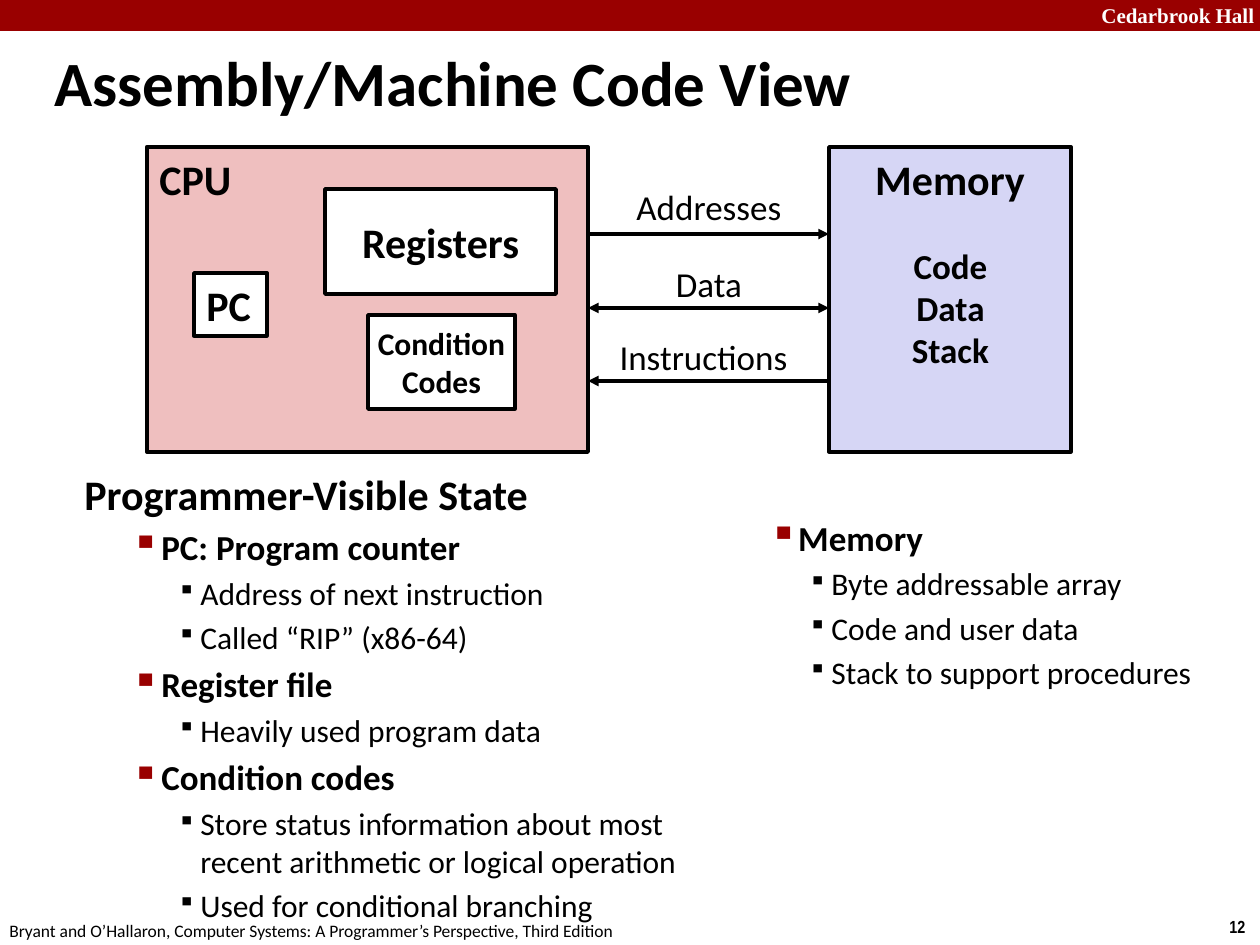
from lxml import etree
from pptx import Presentation
from pptx.dml.color import RGBColor
from pptx.enum.shapes import MSO_CONNECTOR, MSO_SHAPE
from pptx.enum.text import MSO_ANCHOR, PP_ALIGN
from pptx.oxml.ns import qn
from pptx.util import Pt

RECT, STRAIGHT = MSO_SHAPE.RECTANGLE, MSO_CONNECTOR.STRAIGHT
LEFT, CENTER = PP_ALIGN.LEFT, PP_ALIGN.CENTER
TOP, MIDDLE = MSO_ANCHOR.TOP, MSO_ANCHOR.MIDDLE

BLACK = RGBColor(0x00, 0x00, 0x00)
WHITE = RGBColor(0xFF, 0xFF, 0xFF)
CRIMSON = RGBColor(0x99, 0x00, 0x00)
PINK = RGBColor(0xEF, 0xBF, 0xBF)
LAVENDER = RGBColor(0xD6, 0xD6, 0xF5)

PX = 914400 / 126


def px(*lengths):
    return [round(length * PX) for length in lengths]


def write(shape, lines, size, bold=False, align=LEFT, anchor=TOP, wrap=True,
          font="Calibri", color=BLACK):
    frame = shape.text_frame
    frame.word_wrap = wrap
    frame.vertical_anchor = anchor
    frame.text = lines
    for paragraph in frame.paragraphs:
        paragraph.alignment = align
        style = {"name": font, "size": Pt(size), "bold": bold}
        for key, value in style.items():
            setattr(paragraph.font, key, value)
        paragraph.font.color.rgb = color


prs = Presentation()
prs.slide_width, prs.slide_height = px(1260, 945)
slide = prs.slides.add_slide(prs.slide_layouts[6])
shapes = slide.shapes

# Header band, page number and footer
band = shapes.add_shape(RECT, *px(0, 0, 1260, 31))
band.shadow.inherit = False
band.fill.solid()
band.fill.fore_color.rgb = CRIMSON
band.line.fill.background()

school = shapes.add_textbox(*px(1089, -4, 180, 38))
write(school, "Cedarbrook Hall", 12, bold=True, font="Times New Roman", color=WHITE)
page = shapes.add_textbox(*px(1217, 910, 43, 34))
write(page, "12", 10, bold=True, wrap=False, font="Arial Narrow")
footer = shapes.add_textbox(*px(-3, 914, 640, 34))
write(footer, "Bryant and O’Hallaron, Computer Systems: "
      "A Programmer’s Perspective, Third Edition", 10, wrap=False)

# Title
title = shapes.add_textbox(*px(42, 42, 995, 79))
write(title, "Assembly/Machine Code View", 36, bold=True, anchor=MIDDLE)

# CPU with its parts, and memory
BLOCKS = [
    ("CPU", (147, 147, 441, 305), PINK, 2.25, 24, LEFT, TOP),
    ("PC", (194, 273, 73, 63), WHITE, 2, 24, LEFT, MIDDLE),
    ("Registers", (325, 189, 231, 105), WHITE, 2, 24, CENTER, MIDDLE),
    ("Condition\nCodes", (368, 315, 147, 94), WHITE, 2, 18, CENTER, MIDDLE),
    ("Memory", (829, 147, 242, 305), LAVENDER, 2, 24, CENTER, TOP),
]
for name, place, fill, border, size, align, anchor in BLOCKS:
    block = shapes.add_shape(RECT, *px(*place))
    block.shadow.inherit = False
    block.fill.solid()
    block.fill.fore_color.rgb = fill
    block.line.color.rgb = BLACK
    block.line.width = Pt(border)
    write(block, name, size, bold=True, align=align, anchor=anchor, wrap=name == "CPU")

contents = shapes.add_textbox(*px(872, 238, 157, 140))
write(contents, "Code\nData\nStack", 20, bold=True, align=CENTER)

# Buses between CPU and memory: label, label top and width, line height, arrowheads
BUSES = [
    ("Addresses", 179, 242, 234, ["tailEnd"]),
    ("Data", 256, 242, 308, ["headEnd", "tailEnd"]),
    ("Instructions", 329, 231, 381, ["headEnd"]),
]
for name, label_top, label_width, y, heads in BUSES:
    bus = shapes.add_connector(STRAIGHT, *px(588, y, 829, y))
    bus.line.color.rgb = BLACK
    bus.line.width = Pt(2)
    line = bus.line._get_or_add_ln()
    for head in heads:
        etree.SubElement(line, qn("a:" + head), type="triangle")
    etree.SubElement(bus._element.spPr, qn("a:effectLst"))
    label = shapes.add_textbox(*px(588, label_top, label_width, 54))
    write(label, name, 20, align=CENTER)

# Lists: level 0 is the heading, 1 and 2 are bulleted
STATE = [
    (0, "Programmer-Visible State"),
    (1, "PC: Program counter"),
    (2, "Address of next instruction"),
    (2, "Called “RIP” (x86-64)"),
    (1, "Register file"),
    (2, "Heavily used program data"),
    (1, "Condition codes"),
    (2, "Store status information about most recent arithmetic or logical operation"),
    (2, "Used for conditional branching"),
]
MEMORY = [
    (1, "Memory"),
    (2, "Byte addressable array"),
    (2, "Code and user data"),
    (2, "Stack to support procedures"),
]
SIZES = [24, 20, 18]
BULLETS = {1: (CRIMSON, 110), 2: (BLACK, 80)}
# Each level has its left margin and hanging indent
LISTS = [
    (STATE, (72, 462, 669, 426), [(32, 32), (77, 30), (116, 23)]),
    (MEMORY, (741, 510, 499, 217), [(0, 0), (40, 24), (78, 23)]),
]
for items, place, indents in LISTS:
    box = shapes.add_textbox(*px(*place))
    write(box, "\n".join(text for _, text in items), 18)
    for paragraph, (level, _) in zip(box.text_frame.paragraphs, items):
        paragraph.level = level
        paragraph.font.size = Pt(SIZES[level])
        paragraph.font.bold = level < 2
        margin, hang = px(*indents[level])
        props = paragraph._p.get_or_add_pPr()
        props.set("marL", str(margin))
        props.set("indent", str(-hang))
        bullet_parts = []
        before = etree.Element(qn("a:spcBef"))
        etree.SubElement(before, qn("a:spcPct"), val="20000")
        bullet_parts.append(before)
        if level in BULLETS:
            color, percent = BULLETS[level]
            tint = etree.Element(qn("a:buClr"))
            etree.SubElement(tint, qn("a:srgbClr"), val=str(color))
            bullet_parts += [
                tint,
                etree.Element(qn("a:buSzPct"), val=str(percent * 1000)),
                etree.Element(qn("a:buChar"), char="▪"),
            ]
        for position, part in enumerate(bullet_parts):
            props.insert(position, part)

prs.save("out.pptx")
